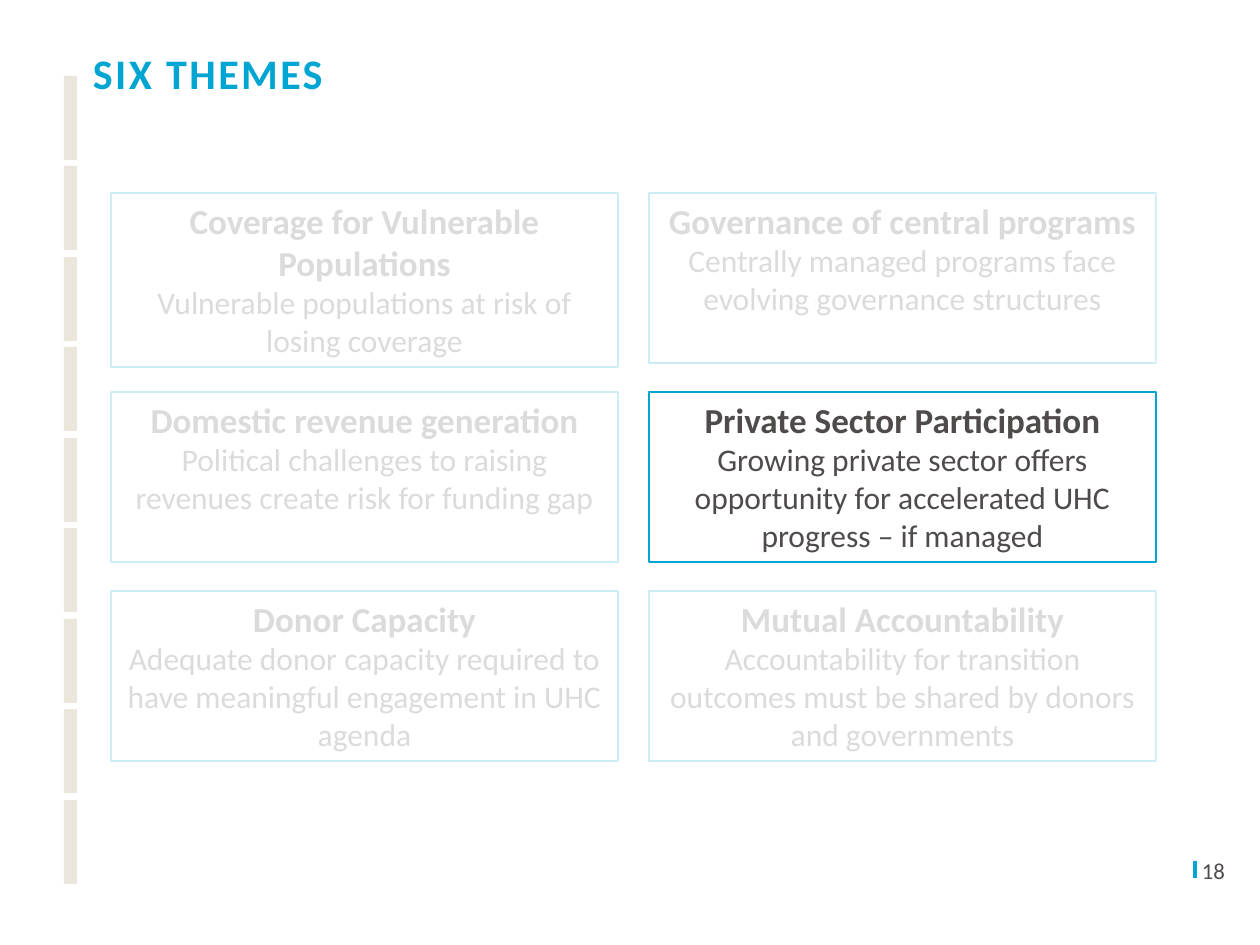
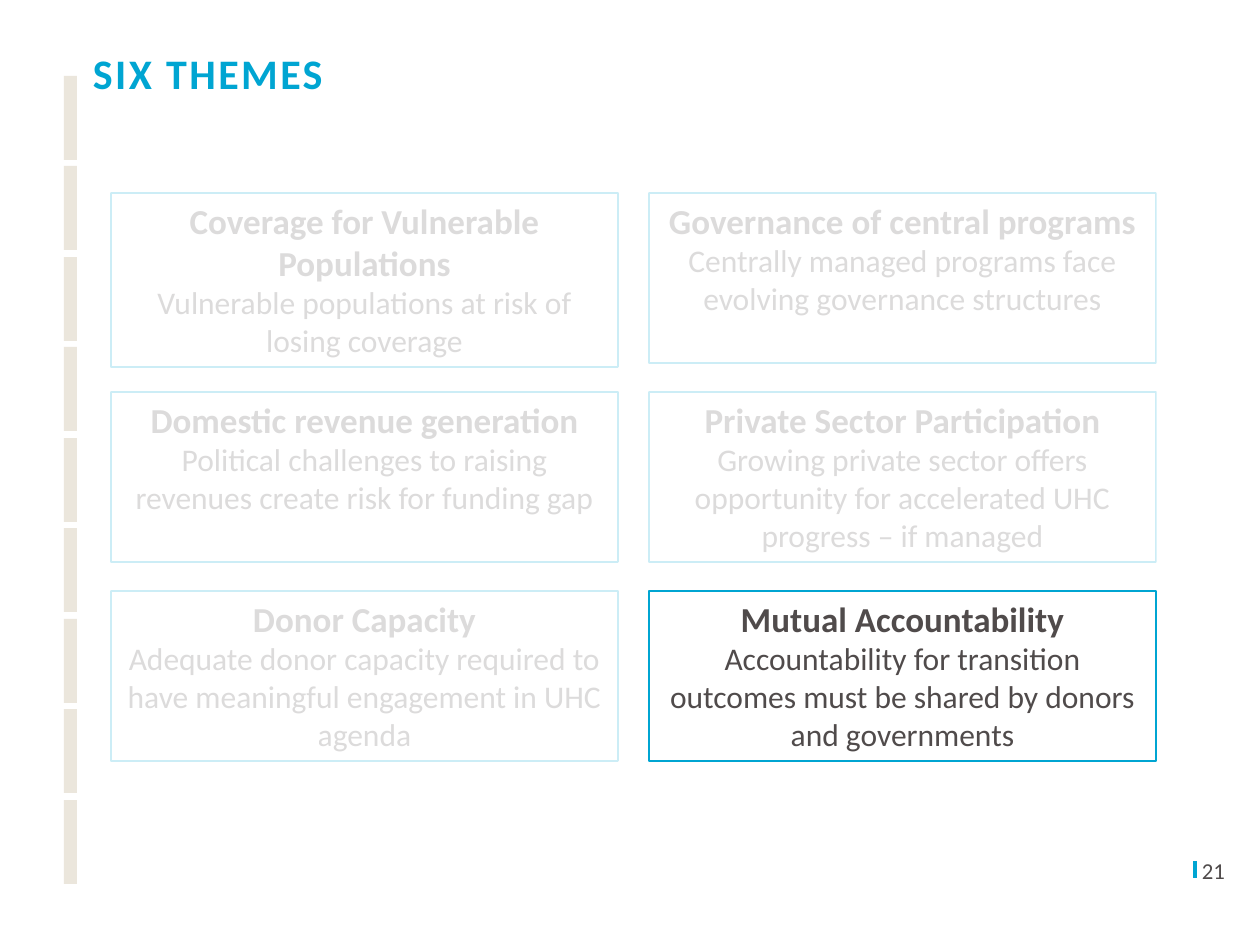
from dataclasses import dataclass

from pptx import Presentation
from pptx.dml.color import RGBColor
from pptx.enum.shapes import MSO_CONNECTOR, MSO_SHAPE
from pptx.enum.text import MSO_ANCHOR, PP_ALIGN
from pptx.oxml.ns import qn
from pptx.util import Emu, Pt
from lxml.etree import SubElement


@dataclass(frozen=True)
class Theme:
    accent: str = "00A5D2"
    ink: str = "504B4B"
    band: str = "EBE6DC"
    font: str = "Calibri"
    title_size: int = 24
    heading_size: int = 20
    body_size: int = 18
    number_size: int = 13
    title_tracking: int = 140
    faded_opacity: int = 20


THEMES = [
    ("Coverage for Vulnerable Populations",
     "Vulnerable populations at risk of losing coverage"),
    ("Governance of central programs",
     "Centrally managed programs face evolving governance structures"),
    ("Domestic revenue generation",
     "Political challenges to raising revenues create risk for funding gap"),
    ("Private Sector Participation",
     "Growing private sector offers opportunity for accelerated UHC progress – if managed"),
    ("Donor Capacity",
     "Adequate donor capacity required to have meaningful engagement in UHC agenda"),
    ("Mutual Accountability",
     "Accountability for transition outcomes must be shared by donors and governments"),
]


def px(length):
    """Turn pixels, 126 to the inch, into EMU."""
    return Emu(round(length * 914400 / 126))


def set_opacity(fill, percent):
    """Make a solid fill partly transparent."""
    for color in fill._xPr.iter(qn("a:srgbClr")):
        SubElement(color, qn("a:alpha")).set("val", str(percent * 1000))


def write(para, text, *, font, size, color, bold=False, align=PP_ALIGN.LEFT,
          opacity=100, tracking=0, line_spacing=None):
    para.alignment = align
    para.line_spacing = line_spacing
    span = para.add_run()
    span.text = text
    span.font.name = font
    span.font.size = Pt(size)
    span.font.bold = bold
    span.font.fill.solid()
    span.font.fill.fore_color.rgb = RGBColor.from_string(color)
    if opacity < 100:
        set_opacity(span.font.fill, opacity)
    if tracking:
        span.font._element.set("spc", str(tracking))


class SlideBuilder:
    def __init__(self, deck, theme):
        self.deck = deck
        self.theme = theme
        self.page = None

    def new_page(self):
        self.page = self.deck.slides.add_slide(self.deck.slide_layouts[6])

    def rectangle(self, left, top, width, height, *, fill=None, line=None, opacity=100):
        box = self.page.shapes.add_shape(
            MSO_SHAPE.RECTANGLE, px(left), px(top), px(width), px(height))
        box.shadow.inherit = False
        if fill:
            box.fill.solid()
            box.fill.fore_color.rgb = RGBColor.from_string(fill)
        else:
            box.fill.background()
        if line:
            box.line.color.rgb = RGBColor.from_string(line)
            box.line.width = Pt(1)
            if opacity < 100:
                set_opacity(box.line.fill, opacity)
        else:
            box.line.fill.background()
        return box

    def text_box(self, left, top, width, height, text, *, inset=(0, 0),
                 anchor=MSO_ANCHOR.TOP, wrap=True, **text_format):
        box = self.page.shapes.add_textbox(px(left), px(top), px(width), px(height))
        frame = box.text_frame
        frame.word_wrap = wrap
        frame.vertical_anchor = anchor
        frame.margin_left = frame.margin_right = px(inset[0])
        frame.margin_top = frame.margin_bottom = px(inset[1])
        write(frame.paragraphs[0], text, font=self.theme.font, **text_format)

    def vertical_line(self, x, top, bottom, color, width):
        line = self.page.shapes.add_connector(
            MSO_CONNECTOR.STRAIGHT, px(x), px(top), px(x), px(bottom))
        line.line.color.rgb = RGBColor.from_string(color)
        line.line.width = Pt(width)
        SubElement(line._element.spPr, qn("a:effectLst"))

    def side_band(self):
        for index in range(9):
            self.rectangle(64, 76 + 181 * index // 2, 13, 84, fill=self.theme.band)

    def page_number(self, number):
        self.vertical_line(1195, 861, 878, self.theme.accent, 2.15)
        self.text_box(1202, 849, 35, 35, str(number), anchor=MSO_ANCHOR.BOTTOM,
                      wrap=False, size=self.theme.number_size, color=self.theme.ink)

    def title(self, text):
        self.text_box(84, 48, 1087, 183, text, inset=(9, 5),
                      size=self.theme.title_size, color=self.theme.accent, bold=True,
                      tracking=self.theme.title_tracking, line_spacing=0.9)

    def theme_card(self, left, top, width, height, heading, summary, active):
        style = self.theme
        opacity = 100 if active else style.faded_opacity
        card = self.rectangle(left, top, width, height, line=style.accent, opacity=opacity)
        frame = card.text_frame
        frame.word_wrap = True
        frame.vertical_anchor = MSO_ANCHOR.TOP
        shared = dict(font=style.font, color=style.ink, align=PP_ALIGN.CENTER, opacity=opacity)
        write(frame.paragraphs[0], heading, size=style.heading_size, bold=True, **shared)
        write(frame.add_paragraph(), summary, size=style.body_size, **shared)


def add_themes_page(builder, number, active_heading):
    builder.new_page()
    builder.side_band()
    builder.page_number(number)
    builder.title("SIX THEMES")
    for index, (heading, summary) in enumerate(THEMES):
        row, column = divmod(index, 2)
        height = 174 if index == 0 else 170  # the first heading takes two lines
        builder.theme_card(111 + 538 * column, 193 + 199 * row, 507, height,
                           heading, summary, heading == active_heading)


def main():
    deck = Presentation()
    deck.slide_width, deck.slide_height = px(1260), px(945)
    builder = SlideBuilder(deck, Theme())
    add_themes_page(builder, 18, "Private Sector Participation")
    add_themes_page(builder, 21, "Mutual Accountability")
    deck.save("out.pptx")


if __name__ == "__main__":
    main()
